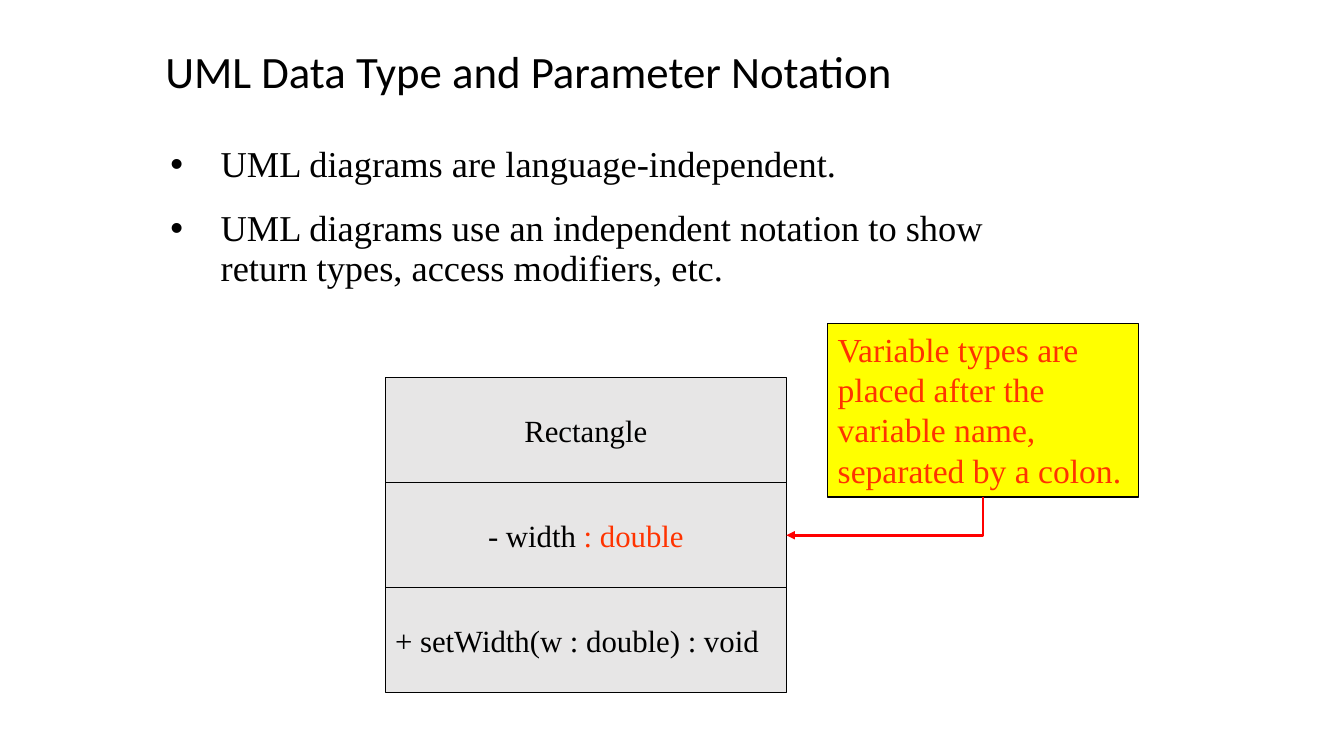
from dataclasses import dataclass

import pptx
import pptx.dml.color
import pptx.enum.shapes
import pptx.enum.text
import pptx.oxml
import pptx.oxml.ns
import pptx.shapes.autoshape
import pptx.slide
import pptx.text.text
import pptx.util

Inches = pptx.util.Inches
Pt = pptx.util.Pt
RGBColor = pptx.dml.color.RGBColor
Align = pptx.enum.text.PP_ALIGN
Anchor = pptx.enum.text.MSO_ANCHOR
qn = pptx.oxml.ns.qn

BLACK = RGBColor(0x00, 0x00, 0x00)
GRAY = RGBColor(0xE7, 0xE6, 0xE6)
YELLOW = RGBColor(0xFF, 0xFF, 0x00)
ORANGE = RGBColor(0xFF, 0x33, 0x00)
RED = RGBColor(0xFF, 0x00, 0x00)
TITLE_FONT = "Calibri"
BODY_FONT = "Times New Roman"

CLASS_LEFT, CLASS_TOP = 3.82, 3.75
CLASS_WIDTH, ROW_HEIGHT = 3.98, 1.04

POINTS = (
    "UML diagrams are language-independent.",
    "UML diagrams use an independent notation to show return types, access modifiers, etc.",
)


@dataclass(frozen=True)
class Box:
    left: float
    top: float
    width: float
    height: float

    def lengths(self) -> tuple:
        return tuple(Inches(v) for v in (self.left, self.top, self.width, self.height))


@dataclass(frozen=True)
class Compartment:
    text: str
    type_text: str = ""
    align: Align = Align.CENTER


COMPARTMENTS = (
    Compartment("Rectangle"),
    Compartment("- width ", ": double"),
    Compartment("+ setWidth(w : double) : void", align=Align.LEFT),
)


def format_font(font: pptx.text.text.Font, name: str, size: float,
                color: RGBColor = BLACK) -> None:
    font.name = name
    font.size = Pt(size)
    font.color.rgb = color


def add_title(slide: pptx.slide.Slide, text: str, box: Box) -> None:
    title = slide.shapes.title
    title.left, title.top, title.width, title.height = box.lengths()
    frame = title.text_frame
    frame.text = text
    frame.word_wrap = True
    frame.auto_size = pptx.enum.text.MSO_AUTO_SIZE.NONE
    frame.vertical_anchor = Anchor.MIDDLE
    heading = frame.paragraphs[0]
    heading.alignment = Align.LEFT
    heading.line_spacing = 0.9
    format_font(heading.runs[0].font, TITLE_FONT, 32)


def add_points(slide: pptx.slide.Slide, points: tuple[str, ...], box: Box) -> None:
    frame = slide.shapes.add_textbox(*box.lengths()).text_frame
    frame.word_wrap = True
    frame.text = "\n".join(points)
    for index, point in enumerate(frame.paragraphs):
        point.line_spacing = 0.9
        point.space_before = Pt(18 if index else 0)
        properties = point._p.get_or_add_pPr()
        properties.set("marL", str(Inches(0.5)))
        properties.set("indent", str(-Inches(0.5)))
        bullet_font = pptx.oxml.parse_xml(
            '<a:buFont xmlns:a="http://schemas.openxmlformats.org/drawingml/2006/main"'
            ' typeface="Arial"/>')
        bullet = pptx.oxml.parse_xml(
            '<a:buChar xmlns:a="http://schemas.openxmlformats.org/drawingml/2006/main"'
            ' char="•"/>')
        properties.extend((bullet_font, bullet))
        format_font(point.runs[0].font, BODY_FONT, 26)


def add_box(slide: pptx.slide.Slide, box: Box, fill: RGBColor,
            line_width: float) -> pptx.shapes.autoshape.Shape:
    shape = slide.shapes.add_shape(
        pptx.enum.shapes.MSO_SHAPE.RECTANGLE, *box.lengths())
    shape.shadow.inherit = False
    shape.fill.solid()
    shape.fill.fore_color.rgb = fill
    shape.line.color.rgb = BLACK
    shape.line.width = Pt(line_width)
    return shape


def add_compartment(slide: pptx.slide.Slide, compartment: Compartment,
                    box: Box) -> pptx.shapes.autoshape.Shape:
    shape = add_box(slide, box, GRAY, 0.75)
    frame = shape.text_frame
    frame.word_wrap = False
    frame.vertical_anchor = Anchor.MIDDLE
    member = frame.paragraphs[0]
    member.text = compartment.text
    member.alignment = compartment.align
    format_font(member.runs[0].font, BODY_FONT, 22)
    if compartment.type_text:
        type_run = member.add_run()
        type_run.text = compartment.type_text
        format_font(type_run.font, BODY_FONT, 22, ORANGE)
    return shape


def add_callout(slide: pptx.slide.Slide, text: str,
                box: Box) -> pptx.shapes.autoshape.Shape:
    shape = add_box(slide, box, YELLOW, 1)
    frame = shape.text_frame
    frame.word_wrap = True
    frame.vertical_anchor = Anchor.TOP
    frame.text = text
    frame.paragraphs[0].alignment = Align.LEFT
    format_font(frame.paragraphs[0].runs[0].font, BODY_FONT, 24, ORANGE)
    return shape


def add_bent_arrow(slide: pptx.slide.Slide, callout: pptx.shapes.autoshape.Shape,
                   target: pptx.shapes.autoshape.Shape) -> None:
    """Runs down from the callout, then left to the target's right side."""
    start_x = callout.left + callout.width // 2
    start_y = callout.top + callout.height
    end_x = target.left + target.width
    end_y = target.top + target.height // 2
    arrow = slide.shapes.add_connector(
        pptx.enum.shapes.MSO_CONNECTOR.ELBOW, start_x, start_y, end_x, end_y)
    arrow.begin_connect(callout, 2)
    arrow.end_connect(target, 3)
    arrow.line.color.rgb = RED
    arrow.line.width = Pt(2)

    # One-bend route: a quarter turn about the centre of its frame
    properties = arrow._element.spPr
    properties.find(qn("a:prstGeom")).set("prst", "bentConnector2")
    frame = properties.find(qn("a:xfrm"))
    frame.attrib.pop("flipH", None)
    frame.set("rot", "5400000")
    drop, run = end_y - start_y, start_x - end_x
    arrow.left = (start_x + end_x - drop) // 2
    arrow.top = (start_y + end_y - run) // 2
    arrow.width, arrow.height = drop, run

    line = properties.find(qn("a:ln"))
    line.append(line.makeelement(qn("a:tailEnd"), {"type": "triangle"}))
    properties.append(properties.makeelement(qn("a:effectLst"), {}))


def main() -> None:
    deck = pptx.Presentation()
    deck.slide_width, deck.slide_height = Inches(13.33), Inches(7.5)
    slide = deck.slides.add_slide(deck.slide_layouts[5])

    # Heading and points
    add_title(slide, "UML Data Type and Parameter Notation",
              Box(1.54, 0.19, 7.59, 1.09))
    add_points(slide, POINTS, Box(1.59, 1.4, 8.75, 1.94))

    # Class diagram
    rows = [
        add_compartment(slide, compartment, Box(
            CLASS_LEFT, CLASS_TOP + index * ROW_HEIGHT, CLASS_WIDTH, ROW_HEIGHT))
        for index, compartment in enumerate(COMPARTMENTS)
    ]

    # Callout pointing at the attribute
    callout = add_callout(
        slide,
        "Variable types are placed after the variable name, separated by a colon.",
        Box(8.21, 3.21, 3.08, 1.72))
    add_bent_arrow(slide, callout, rows[1])

    deck.save("out.pptx")


if __name__ == "__main__":
    main()
